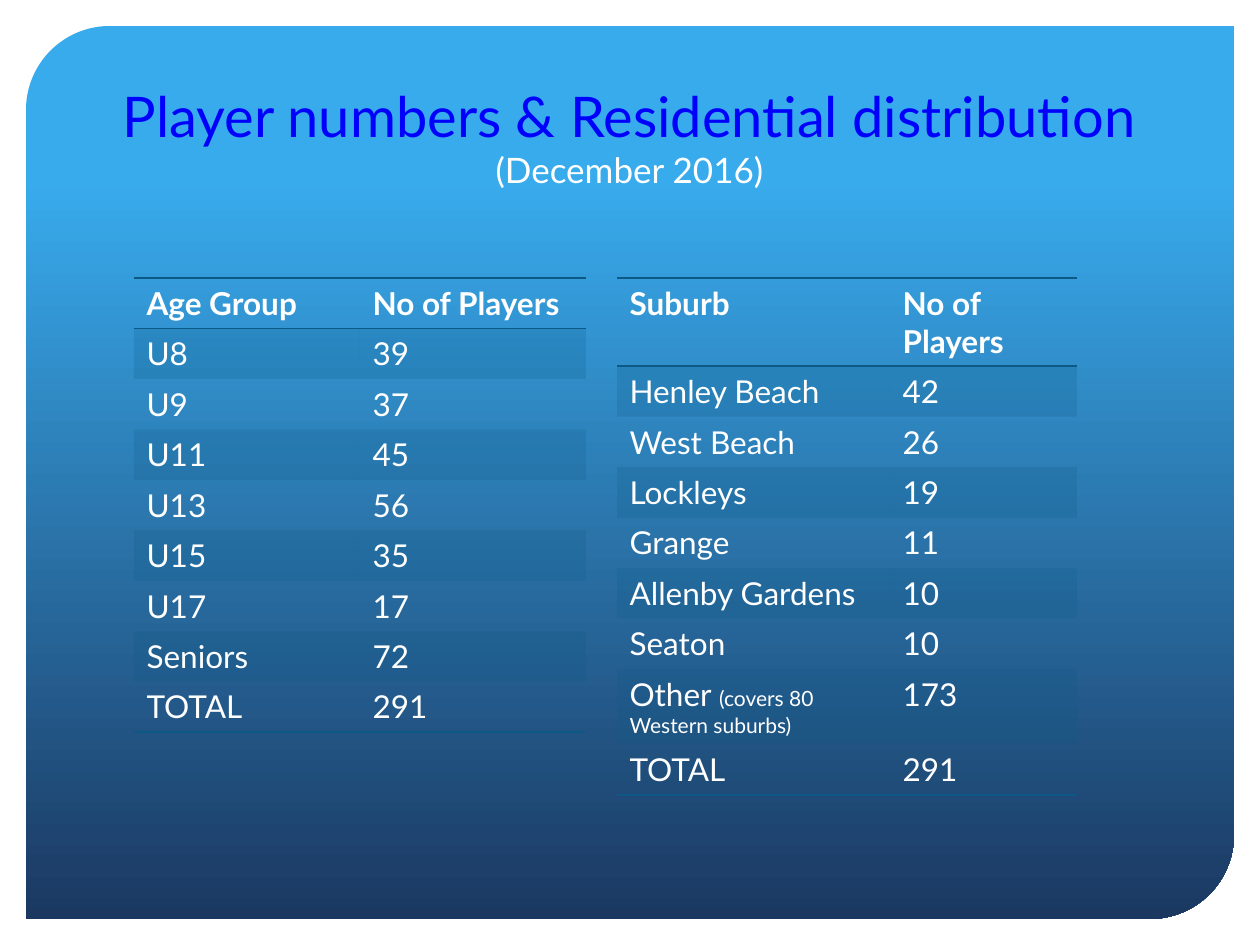
from dataclasses import dataclass

from lxml import etree
from pptx import Presentation
from pptx.dml.color import RGBColor
from pptx.enum import shapes, text
from pptx.oxml import parse_xml
from pptx.oxml.ns import nsdecls, qn
from pptx.util import Emu, Pt

PX = 914400 / 126  # EMU in one px
PLAIN_TABLE = "{2D5ABB26-0587-4C30-8999-92F81FD0307C}"  # no style, no grid


@dataclass(frozen=True)
class Theme:
    font: str = "Lato"
    title: str = "0000FF"
    body: str = "FFFFFF"
    rule: str = "0C5986"
    sky: str = "38ABED"
    navy: str = "1B3861"
    title_size: int = 32
    date_size: int = 20
    body_size: int = 18
    note_size: int = 12


THEME = Theme()

AGE_GROUPS = [
    ("Age Group", "No of Players"),
    ("U8", "39"),
    ("U9", "37"),
    ("U11", "45"),
    ("U13", "56"),
    ("U15", "35"),
    ("U17", "17"),
    ("Seniors", "72"),
    ("TOTAL", "291"),
]
SUBURBS = [
    ("Suburb", "No of Players"),
    ("Henley Beach", "42"),
    ("West Beach", "26"),
    ("Lockleys", "19"),
    ("Grange", "11"),
    ("Allenby Gardens", "10"),
    ("Seaton", "10"),
    ("Other ", "173"),
    ("TOTAL", "291"),
]
OTHER_NOTE = "(covers 80 Western suburbs)"


def px(length):
    return Emu(round(length * PX))


def add_span(para, words, size=THEME.body_size, color=THEME.body, bold=False):
    span = para.add_run()
    span.text = words
    span.font.name = THEME.font
    span.font.size = Pt(size)
    span.font.bold = bold
    span.font.color.rgb = RGBColor.from_string(color)


def add_panel(page, left, top, width, height):
    """Gradient panel with two rounded corners, behind everything else."""
    panel = page.shapes.add_shape(
        shapes.MSO_SHAPE.ROUND_2_DIAG_RECTANGLE,
        px(left), px(top), px(width), px(height))
    panel.shadow.inherit = False
    panel.adjustments[0] = 0.094
    panel.adjustments[1] = 0
    panel.line.fill.background()
    panel.fill.gradient()
    panel.fill.gradient_angle = 270
    stops = [(0.17, THEME.sky), (1, THEME.navy)]
    for stop, (position, color) in zip(panel.fill.gradient_stops, stops):
        stop.position = position
        stop.color.rgb = RGBColor.from_string(color)
    page.shapes._spTree.insert(2, panel._element)


def set_title(page, left, top, width, height):
    title = page.shapes.title
    title.left, title.top = px(left), px(top)
    title.width, title.height = px(width), px(height)
    frame = title.text_frame
    frame.word_wrap = True
    frame.auto_size = text.MSO_AUTO_SIZE.NONE
    frame.vertical_anchor = text.MSO_ANCHOR.BOTTOM
    para = frame.paragraphs[0]
    para.alignment = text.PP_ALIGN.CENTER
    add_span(para, "Player numbers & Residential distribution ",
             size=THEME.title_size, color=THEME.title)
    add_span(para, "(December 2016)", size=THEME.date_size)


def style_cell(cell, banded, edges):
    """Give a cell its translucent band and its horizontal rules."""
    if banded:
        cell.fill.solid()
        cell.fill.fore_color.rgb = RGBColor.from_string(THEME.rule)
        color = cell._tc.tcPr.find(f"{qn('a:solidFill')}/{qn('a:srgbClr')}")
        etree.SubElement(color, qn("a:alpha"), val="20000")
    else:
        cell.fill.background()
    for index, edge in enumerate(edges):
        cell._tc.tcPr.insert(index, parse_xml(
            f'<a:{edge} {nsdecls("a")} w="12700"><a:solidFill>'
            f'<a:srgbClr val="{THEME.rule}"/></a:solidFill></a:{edge}>'))


def add_player_table(page, rows, left, top, columns, row_height):
    frame = page.shapes.add_table(
        len(rows), len(columns), px(left), px(top),
        px(sum(columns)), px(row_height * len(rows)))
    table = frame.table
    table._tbl.tblPr.find(qn("a:tableStyleId")).text = PLAIN_TABLE
    table.first_row = table.horz_banding = False
    for column, width in zip(table.columns, columns):
        column.width = px(width)
    edges = {0: ("lnT", "lnB"), len(rows) - 1: ("lnB",)}
    for r, values in enumerate(rows):
        table.rows[r].height = px(row_height)
        for c, value in enumerate(values):
            cell = table.cell(r, c)
            add_span(cell.text_frame.paragraphs[0], value, bold=r == 0)
            style_cell(cell, r % 2 == 1, edges.get(r, ()))
    return table


def main():
    deck = Presentation()
    deck.slide_width, deck.slide_height = px(1260), px(945)
    page = deck.slides.add_slide(deck.slide_layouts[5])

    # Background and heading
    add_panel(page, 26, 26, 1208, 893)
    set_title(page, 107, 53, 1045, 144)

    # Players by age group and by suburb
    add_player_table(page, AGE_GROUPS, 134, 278, (226, 226), 50)
    suburbs = add_player_table(page, SUBURBS, 617, 278, (273, 187), 34)
    other = suburbs.cell(7, 0).text_frame.paragraphs[0]
    add_span(other, OTHER_NOTE, size=THEME.note_size)

    deck.save("out.pptx")


if __name__ == "__main__":
    main()
